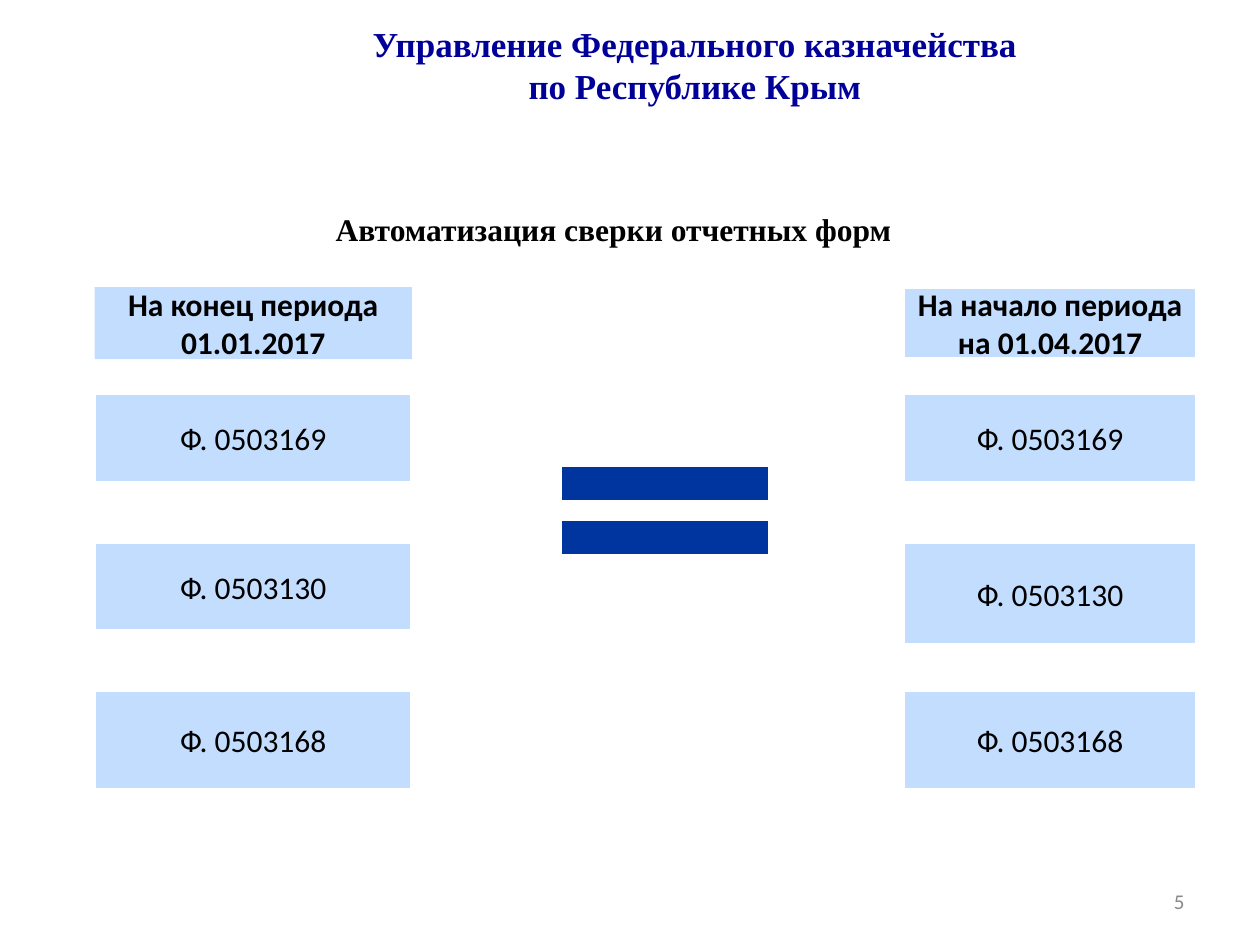
from dataclasses import dataclass

from pptx import Presentation
from pptx import util as u
from pptx.dml.color import RGBColor
from pptx.enum import shapes, text


@dataclass(frozen=True)
class Theme:
    serif: str = "Times New Roman"
    sans: str = "Calibri"
    navy: str = "000099"
    blue: str = "00349E"
    pale: str = "C3DDFF"
    black: str = "000000"
    white: str = "FFFFFF"
    grey: str = "898989"
    title: int = 20
    body: int = 18
    small: int = 12
    outline: int = 2


THEME = Theme()
CENTER = text.PP_ALIGN.CENTER
ROW_TOPS = (3.12, 4.3, 5.48)
FORMS = ("Ф. 0503169", "Ф. 0503130", "Ф. 0503168")


def write(shape, lines, color, align=CENTER, anchor=text.MSO_ANCHOR.MIDDLE, **font):
    frame = shape.text_frame
    frame.word_wrap = True
    frame.vertical_anchor = anchor
    for index, line in enumerate(lines):
        para = frame.add_paragraph() if index else frame.paragraphs[0]
        para.alignment = align
        span = para.add_run()
        span.text = line
        for name, value in font.items():
            setattr(span.font, name, value)
        span.font.color.rgb = RGBColor.from_string(color)


def add_label(page, box, lines, color, **style):
    label = page.shapes.add_textbox(*map(u.Inches, box))
    write(label, lines, color, **style)


def add_block(page, box, kind, fill, outlined=True):
    block = page.shapes.add_shape(kind, *map(u.Inches, box))
    block.shadow.inherit = False
    block.fill.solid()
    block.fill.fore_color.rgb = RGBColor.from_string(fill)
    if outlined:
        block.line.color.rgb = RGBColor.from_string(THEME.white)
        block.line.width = u.Pt(THEME.outline)
    else:
        block.line.fill.background()
    return block


def add_heading(page, box, lines, color, size):
    add_label(page, box, lines, color, anchor=text.MSO_ANCHOR.TOP,
              name=THEME.serif, size=u.Pt(size), bold=True)


def add_period(page, box, heading, row_heights, outlined):
    """Heading block with the report forms below it."""
    left, top, width, height = box
    rows = [(top, height, heading, True, outlined)]
    rows += [(row_top, row_height, form, False, True)
             for row_top, row_height, form in zip(ROW_TOPS, row_heights, FORMS)]
    for row_top, row_height, caption, bold, line in rows:
        block = add_block(page, (left, row_top, width, row_height),
                          shapes.MSO_SHAPE.RECTANGLE, THEME.pale, line)
        write(block, [caption], THEME.black,
              name=THEME.sans, size=u.Pt(THEME.body), bold=bold)


def add_page_number(page, box, number):
    add_label(page, box, [number], THEME.grey, align=text.PP_ALIGN.RIGHT,
              name=THEME.sans, size=u.Pt(THEME.small))


def main():
    deck = Presentation()
    deck.slide_width, deck.slide_height = u.Inches(10), u.Inches(7.5)
    page = deck.slides.add_slide(deck.slide_layouts[6])

    # Page number and equality sign
    add_page_number(page, (7.17, 6.95, 2.33, 0.4), "5")
    add_block(page, (4.15, 3.44, 2.26, 1.22), shapes.MSO_SHAPE.MATH_EQUAL, THEME.blue)

    # Headings
    add_heading(page, (2.56, 0.13, 5.91, 0.77),
                ["Управление Федерального казначейства", "по Республике Крым"],
                THEME.navy, THEME.title)
    add_heading(page, (2.24, 1.62, 5.26, 0.4),
                ["Автоматизация сверки отчетных форм"], THEME.black, THEME.body)

    # Compared periods
    add_period(page, (0.75, 2.28, 2.52, 0.57), "На конец периода 01.01.2017",
               (0.71, 0.71, 0.79), outlined=False)
    add_period(page, (7.17, 2.28, 2.33, 0.57), "На начало периода на 01.04.2017",
               (0.71, 0.82, 0.79), outlined=True)

    deck.save("out.pptx")


if __name__ == "__main__":
    main()
